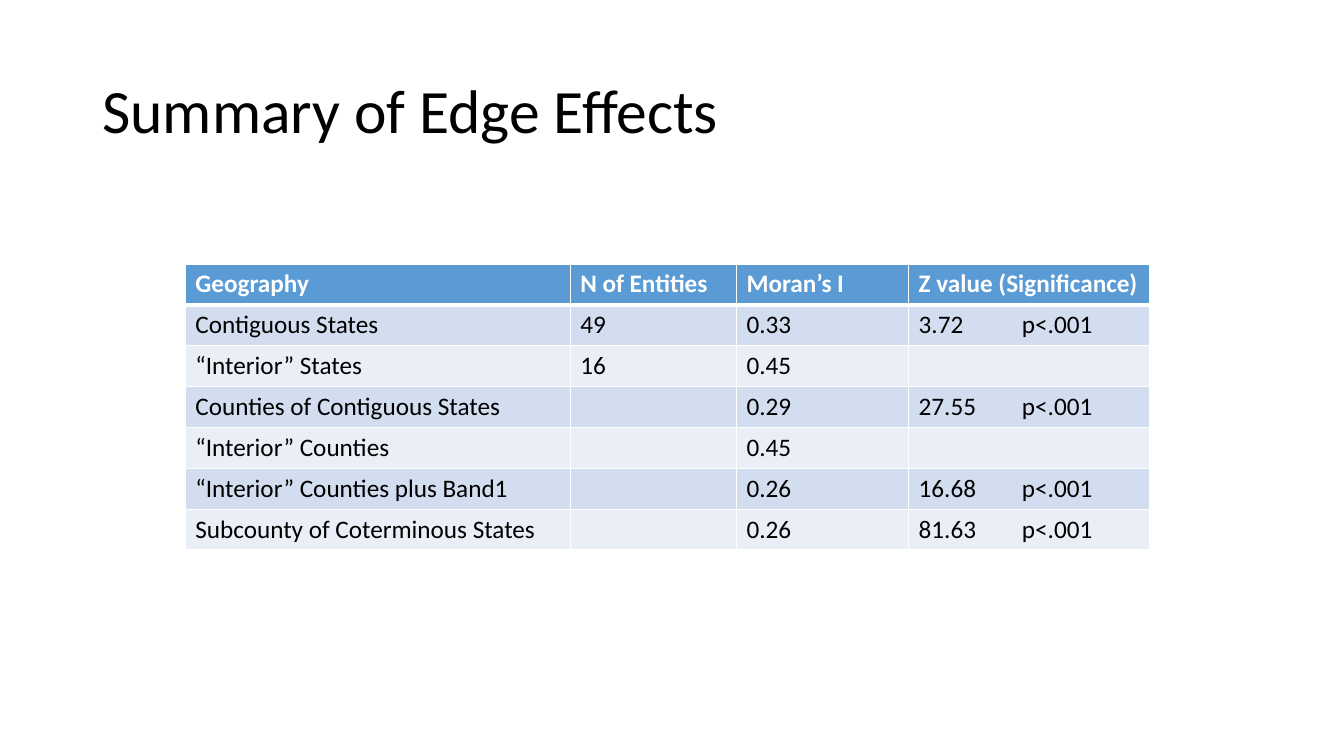
from dataclasses import dataclass

from lxml.etree import SubElement
from pptx import Presentation
from pptx.dml.color import RGBColor as Color
from pptx.enum.text import MSO_ANCHOR as Anchor
from pptx.oxml.ns import qn
from pptx.util import Cm, Pt


@dataclass(frozen=True)
class Theme:
    """Colours, font and type sizes of the slide."""

    font: str = "Calibri"
    title_size: int = 44
    table_size: int = 18
    ink: str = "000000"
    white: str = "FFFFFF"
    header: str = "5B9BD5"
    bands: tuple = ("D2DEEF", "EAEFF7")
    rule: int = 1
    header_rule: int = 3


COLUMN_WIDTHS = (9.7, 4.19, 4.34, 6.08)
ROW_HEIGHT = 1.03
SIGNIFICANCE_TAB = 2.6
ROWS = (
    ("Geography", "N of Entities", "Moran’s I", "Z value (Significance)"),
    ("Contiguous States", "49", "0.33", "3.72\tp<.001"),
    ("“Interior” States", "16", "0.45", ""),
    ("Counties of Contiguous States", "", "0.29", "27.55\tp<.001"),
    ("“Interior” Counties", "", "0.45", ""),
    ("“Interior” Counties plus Band1", "", "0.26", "16.68\tp<.001"),
    ("Subcounty of Coterminous States", "", "0.26", "81.63\tp<.001"),
)


def write_text(frame, text, *, font, size, color, bold=False, spacing=None, tab=None):
    """Fill a text frame with one formatted paragraph."""
    paragraph = frame.paragraphs[0]
    paragraph.font.size = Pt(size)
    if spacing:
        paragraph.line_spacing = spacing
    if tab:
        properties = paragraph._p.get_or_add_pPr()
        stops = SubElement(properties, qn("a:tabLst"))
        SubElement(stops, qn("a:tab"), pos=str(Cm(tab)), algn="l")
    if text:
        run = paragraph.add_run()
        run.text = text
        run.font.name = font
        run.font.size = Pt(size)
        run.font.bold = bold
        run.font.color.rgb = Color.from_string(color)


def draw_border(cell, side, width, color):
    """Draw one solid edge of a table cell."""
    properties = cell._tc.get_or_add_tcPr()
    line = SubElement(properties, qn(f"a:ln{side}"), w=str(Pt(width)))
    fill = SubElement(line, qn("a:solidFill"))
    SubElement(fill, qn("a:srgbClr"), val=color)


class SlideBuilder:
    """Draw styled elements on the current slide."""

    def __init__(self, slide, theme):
        """Keep the slide and its theme."""
        self.slide = slide
        self.theme = theme

    def title(self, text, left, top, width, height):
        """Add the slide heading."""
        shape = self.slide.shapes.add_textbox(Cm(left), Cm(top), Cm(width), Cm(height))
        frame = shape.text_frame
        frame.word_wrap = True
        frame.vertical_anchor = Anchor.MIDDLE
        write_text(frame, text, font=self.theme.font, size=self.theme.title_size,
                   color=self.theme.ink, spacing=0.9)

    def table(self, rows, left, top, widths, row_height):
        """Add a banded table with a header row."""
        shape = self.slide.shapes.add_table(
            len(rows), len(widths), Cm(left), Cm(top),
            Cm(sum(widths)), Cm(row_height * len(rows)))
        table = shape.table
        for column, width in zip(table.columns, widths):
            column.width = Cm(width)
        for index, values in enumerate(rows):
            table.rows[index].height = Cm(row_height)
            for cell, text in zip(table.rows[index].cells, values):
                self.cell(cell, text, index)

    def cell(self, cell, text, row):
        """Format one table cell according to its row."""
        theme = self.theme
        is_header = row == 0
        widths = {
            "L": theme.rule,
            "R": theme.rule,
            "T": theme.header_rule if row == 1 else theme.rule,
            "B": theme.header_rule if is_header else theme.rule,
        }
        for side, width in widths.items():
            draw_border(cell, side, width, theme.white)
        cell.fill.solid()
        band = theme.bands[(row - 1) % len(theme.bands)]
        cell.fill.fore_color.rgb = Color.from_string(theme.header if is_header else band)
        write_text(cell.text_frame, text, font=theme.font, size=theme.table_size,
                   color=theme.white if is_header else theme.ink, bold=is_header,
                   tab=SIGNIFICANCE_TAB if "\t" in text else None)


def main():
    """Build and save the presentation."""
    presentation = Presentation()
    presentation.slide_width = Cm(33.87)
    presentation.slide_height = Cm(19.05)
    slide = presentation.slides.add_slide(presentation.slide_layouts[6])
    builder = SlideBuilder(slide, Theme())
    builder.title("Summary of Edge Effects", 2.33, 1.01, 29.21, 3.68)
    builder.table(ROWS, 4.67, 6.65, COLUMN_WIDTHS, ROW_HEIGHT)
    presentation.save("out.pptx")


if __name__ == "__main__":
    main()
